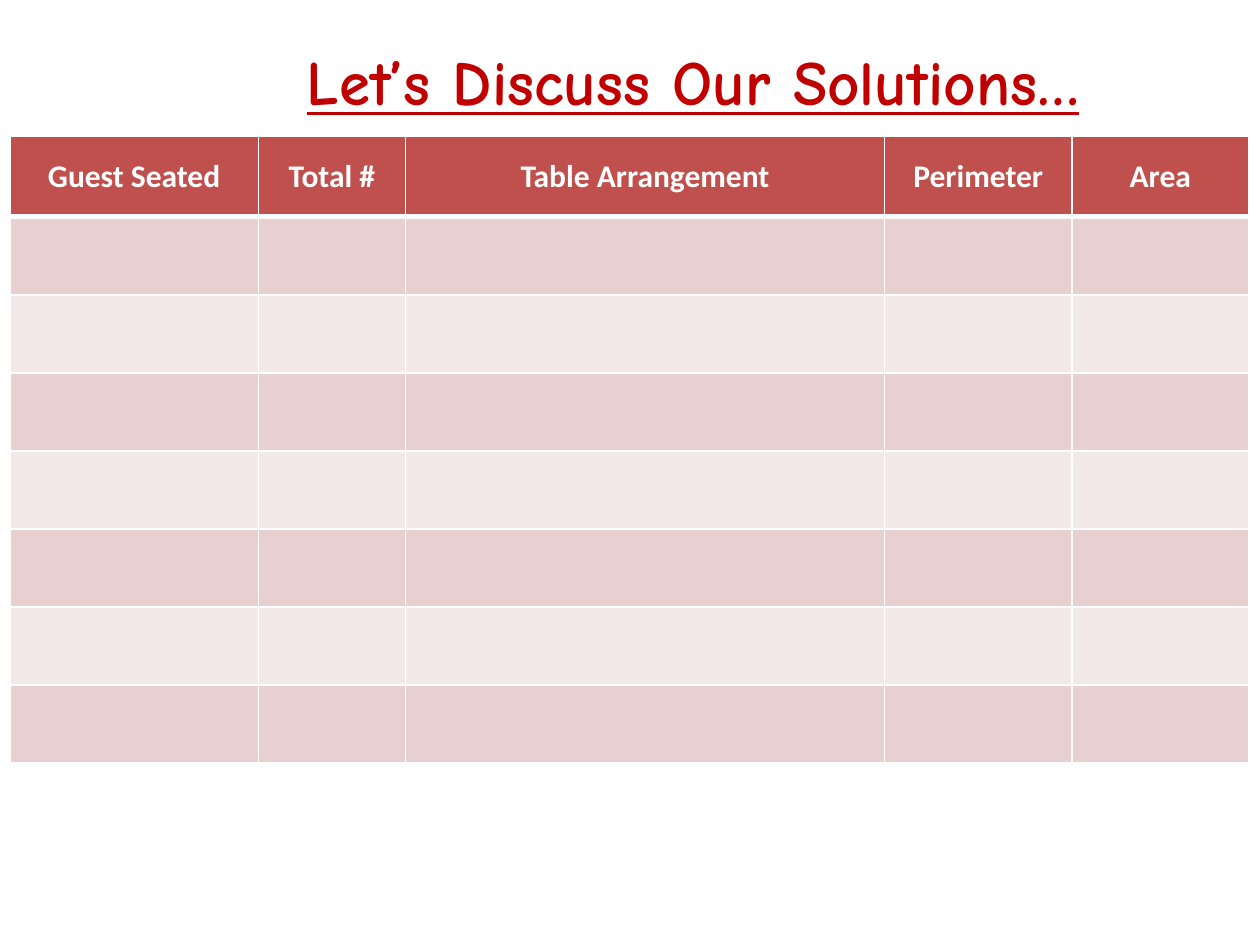
from lxml.etree import SubElement
from pptx import Presentation
from pptx.dml.color import RGBColor
from pptx.enum.text import MSO_ANCHOR, PP_ALIGN
from pptx.oxml.ns import qn
from pptx.util import Inches, Pt

WHITE = RGBColor(0xFF, 0xFF, 0xFF)
TITLE_RED = RGBColor(0xC0, 0x00, 0x00)
HEADER_RED = RGBColor(0xC0, 0x50, 0x4D)
BANDS = (RGBColor(0xE8, 0xD0, 0xD0), RGBColor(0xF4, 0xE9, 0xE9))

HEADINGS = ("Guest Seated", "Total #", "Table Arrangement", "Perimeter", "Area")
COL_WIDTHS = (1.97, 1.17, 3.8, 1.49, 1.4)
ROW_HEIGHTS = (0.64,) + (0.62,) * 7


class SlideBuilder:
    title_font = dict(name="Comic Neue", size=Pt(36), bold=True, underline=True)
    header_font = dict(name="Calibri", size=Pt(18), bold=True)

    def __init__(self, prs):
        self.s = prs.slides.add_slide(prs.slide_layouts[6])

    def add_text(self, tf, text, font, color):
        p = tf.paragraphs[0]
        p.alignment = PP_ALIGN.CENTER
        r = p.add_run()
        r.text = text
        for key, value in font.items():
            setattr(r.font, key, value)
        r.font.color.rgb = color

    def title(self, text, left, top, width, height):
        box = self.s.shapes.add_textbox(*map(Inches, (left, top, width, height)))
        tf = box.text_frame
        tf.word_wrap = True
        tf.vertical_anchor = MSO_ANCHOR.MIDDLE
        self.add_text(tf, text, self.title_font, TITLE_RED)

    def borders(self, cell, top=1, bottom=1):
        tcPr = cell._tc.get_or_add_tcPr()
        for side, width in dict(L=1, R=1, T=top, B=bottom).items():
            ln = SubElement(tcPr, qn(f"a:ln{side}"), w=str(Pt(width)))
            fill = SubElement(ln, qn("a:solidFill"))
            SubElement(fill, qn("a:srgbClr"), val=str(WHITE))

    def table(self, headings, widths, heights, left, top):
        size = (left, top, sum(widths), sum(heights))
        tbl = self.s.shapes.add_table(
            len(heights), len(widths), *map(Inches, size)).table
        for col, width in zip(tbl.columns, widths):
            col.width = Inches(width)
        for i, (row, height) in enumerate(zip(tbl.rows, heights)):
            row.height = Inches(height)
            for cell in row.cells:
                # A thick rule parts the header from the body
                self.borders(cell, top=3 if i == 1 else 1, bottom=3 if i == 0 else 1)
                cell.fill.solid()
                cell.fill.fore_color.rgb = BANDS[(i - 1) % 2] if i else HEADER_RED
        for cell, text in zip(tbl.rows[0].cells, headings):
            cell.vertical_anchor = MSO_ANCHOR.MIDDLE
            self.add_text(cell.text_frame, text, self.header_font, WHITE)


def main():
    prs = Presentation()
    prs.slide_width, prs.slide_height = Inches(10), Inches(7.5)
    slide = SlideBuilder(prs)

    # Title
    slide.title("Let’s Discuss Our Solutions…", 1.25, -0.17, 8.5, 1.61)

    # Empty solutions table
    slide.table(HEADINGS, COL_WIDTHS, ROW_HEIGHTS, 0.08, 1.08)

    prs.save("out.pptx")


if __name__ == "__main__":
    main()
